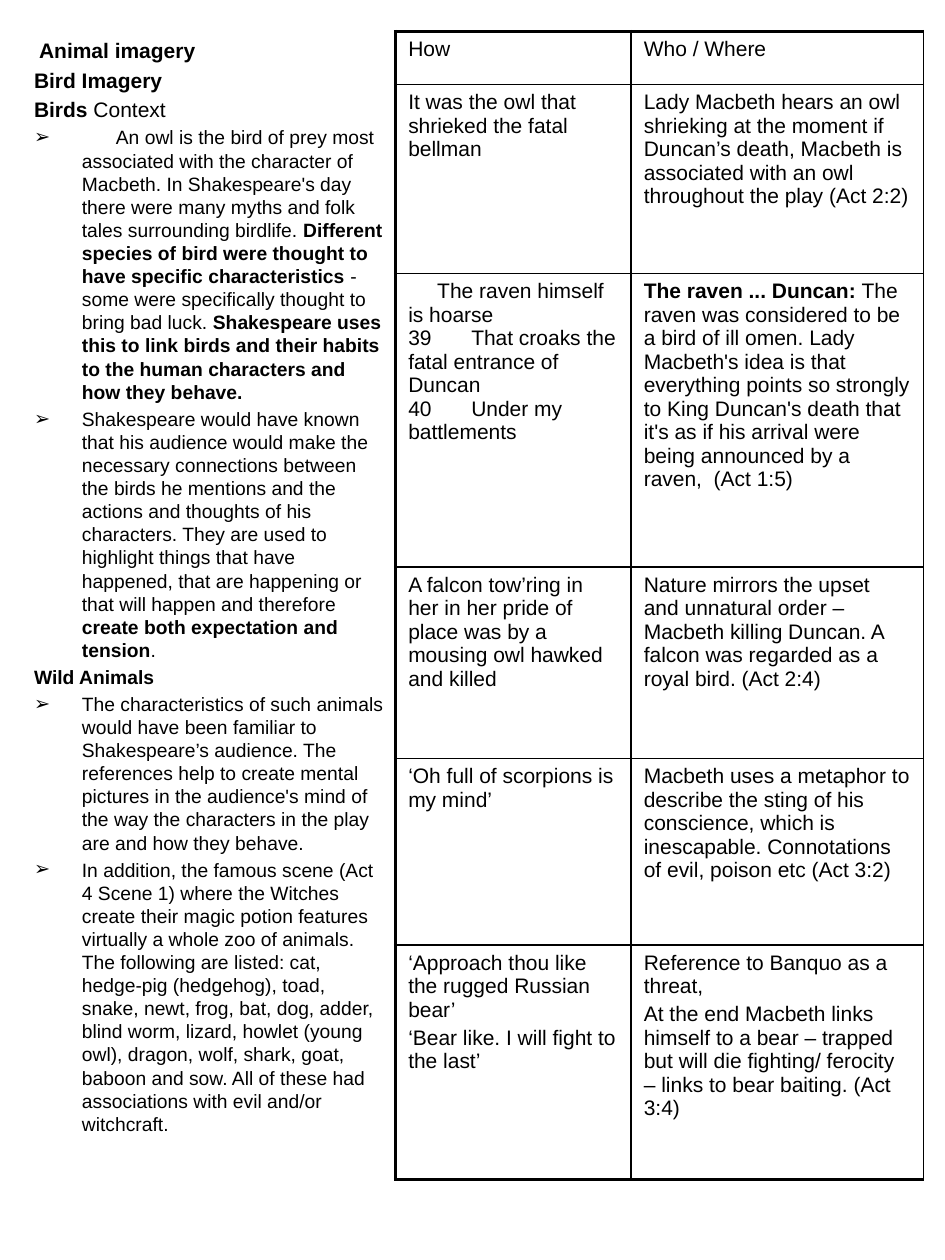
from dataclasses import dataclass

from pptx import Presentation
from pptx.dml.color import RGBColor
from pptx.enum.text import MSO_ANCHOR, MSO_AUTO_SIZE
from pptx.oxml.ns import qn
from pptx.util import Inches, Pt
from lxml.etree import SubElement


@dataclass(frozen=True)
class Theme:
    font: str = "Arial"
    ink: RGBColor = RGBColor(0, 0, 0)
    heading: Pt = Pt(12)
    body: Pt = Pt(11)
    cell: Pt = Pt(12)
    cell_gap: Pt = Pt(2.4)
    outer_line: Pt = Pt(2.25)
    inner_line: Pt = Pt(1)
    hanging: Inches = Inches(0.38)


THEME = Theme()

# (kind, text); ** switches bold on and off
NOTES = [
    ("heading", "** Animal imagery**"),
    ("heading", "**Bird Imagery**"),
    ("heading", "**Birds** Context"),
    ("bullet", "\tAn owl is the bird of prey most associated with the character of Macbeth. "
     "In Shakespeare's day there were many myths and folk tales surrounding birdlife. "
     "**Different species of bird were thought to have specific characteristics** - some were "
     "specifically thought to bring bad luck. **Shakespeare uses this to link birds and their "
     "habits to the human characters and how they behave.**"),
    ("bullet", "Shakespeare would have known that his audience would make the necessary "
     "connections between the birds he mentions and the actions and thoughts of his characters. "
     "They are used to highlight things that have happened, that are happening or that will "
     "happen and therefore **create both expectation and tension**."),
    ("subheading", "**Wild Animals**"),
    ("bullet", "The characteristics of such animals would have been familiar to Shakespeare’s "
     "audience. The references help to create mental pictures in the audience's mind of the way "
     "the characters in the play are and how they behave."),
    ("bullet", "In addition, the famous scene (Act 4 Scene 1) where the Witches create their "
     "magic potion features virtually a whole zoo of animals. The following are listed: cat, "
     "hedge-pig (hedgehog), toad, snake, newt, frog, bat, dog, adder, blind worm, lizard, howlet "
     "(young owl), dragon, wolf, shark, goat, baboon and sow. All of these had associations with "
     "evil and/or witchcraft."),
]

COLUMN_WIDTHS = [1.87, 2.32]
# (row height, how, who / where); each cell is a list of paragraphs
QUOTES = [
    (0.42, ["How"], ["Who / Where"]),
    (1.5, ["It was the owl that shrieked the fatal bellman"],
     ["Lady Macbeth hears an owl shrieking at the moment if Duncan’s death, Macbeth is "
      "associated with an owl throughout the play (Act 2:2)"]),
    (2.33, ["The raven himself is hoarse\n39\tThat croaks the fatal entrance of Duncan\n"
            "40\tUnder my battlements"],
     ["**The raven ... Duncan:** The raven was considered to be a bird of ill omen. Lady "
      "Macbeth's idea is that everything points so strongly to King Duncan's death that it's as "
      "if his arrival were being announced by a raven,  (Act 1:5)"]),
    (1.52, ["A falcon tow’ring in her in her pride of place was by a mousing owl hawked and "
            "killed"],
     ["Nature mirrors the upset and unnatural order – Macbeth killing Duncan. A falcon was "
      "regarded as a royal bird. (Act 2:4)"]),
    (1.48, ["‘Oh full of scorpions is my mind’"],
     ["Macbeth uses a metaphor to describe the sting of his conscience, which is inescapable. "
      "Connotations of evil, poison etc (Act 3:2)"]),
    (1.86, ["‘Approach thou like the rugged Russian bear’",
            "‘Bear like. I will fight to the last’"],
     ["Reference to Banquo as a threat,",
      "At the end Macbeth links himself to a bear – trapped but will die fighting/ ferocity – "
      "links to bear baiting. (Act 3:4)"]),
]


def write_spans(para, text, size):
    """Write text, with ** switching bold and a newline breaking the line."""
    for index, piece in enumerate(text.split("**")):
        for number, line in enumerate(piece.split("\n")):
            if number:
                para.add_line_break()
            if not line:
                continue
            span = para.add_run()
            span.text = line
            formats = {"name": THEME.font, "size": size, "bold": index % 2 == 1}
            for name, value in formats.items():
                setattr(span.font, name, value)
            span.font.color.rgb = THEME.ink


def set_indent(para, left, first):
    properties = para._p.get_or_add_pPr()
    properties.set("marL", str(left))
    properties.set("indent", str(first))
    return properties


def set_tabs(properties, *positions):
    tabs = SubElement(properties, qn("a:tabLst"))
    for position in positions:
        SubElement(tabs, qn("a:tab"), pos=str(position), algn="l")


def paragraphs(frame, items):
    """Yield a paragraph of the frame for each item."""
    for index, item in enumerate(items):
        yield (frame.add_paragraph() if index else frame.paragraphs[0]), item


def add_notes(page, left, top, width, height):
    page.shapes.title.element.getparent().remove(page.shapes.title.element)
    box = page.placeholders[1]
    for name, value in {"left": left, "top": top, "width": width, "height": height}.items():
        setattr(box, name, value)
    frame = box.text_frame
    frame.word_wrap = True
    frame.auto_size = MSO_AUTO_SIZE.NONE
    frame.vertical_anchor = MSO_ANCHOR.TOP
    for para, (kind, text) in paragraphs(frame, NOTES):
        properties = set_indent(para, THEME.hanging, -THEME.hanging)
        if kind == "bullet":
            SubElement(properties, qn("a:buFont"), typeface=THEME.font)
            SubElement(properties, qn("a:buChar"), char="➢")
        else:
            SubElement(properties, qn("a:buNone"))
        if "\t" in text:
            set_tabs(properties, Inches(0.27), Inches(0.65))
        write_spans(para, text, THEME.heading if kind == "heading" else THEME.body)


def set_borders(cell, widths):
    properties = cell._tc.get_or_add_tcPr()
    for index, (side, width) in enumerate(widths.items()):
        line = properties.makeelement(qn(f"a:{side}"), {"w": str(width)})
        fill = SubElement(line, qn("a:solidFill"))
        SubElement(fill, qn("a:srgbClr"), val=str(THEME.ink))
        properties.insert(index, line)


def fill_cell(cell, texts):
    cell.fill.background()
    for para, text in paragraphs(cell.text_frame, texts):
        para.space_before = THEME.cell_gap
        if "\t" in text:
            set_tabs(set_indent(para, 0, Inches(0.23)), Inches(0.33))
        write_spans(para, text, THEME.cell)


def add_quotes(page, left, top, width, height):
    table = page.shapes.add_table(
        len(QUOTES), len(COLUMN_WIDTHS), left, top, width, height).table
    table.first_row = table.horz_banding = False
    for column, column_width in zip(table.columns, COLUMN_WIDTHS):
        column.width = Inches(column_width)
    outer, inner = THEME.outer_line, THEME.inner_line
    last = len(QUOTES) - 1
    for row, (row_height, *cells) in enumerate(QUOTES):
        table.rows[row].height = Inches(row_height)
        for column, texts in enumerate(cells):
            cell = table.cell(row, column)
            fill_cell(cell, texts)
            set_borders(cell, {
                "lnL": inner if column else outer,
                "lnR": inner,
                "lnT": inner if row else outer,
                "lnB": outer if row == last else inner,
            })


def main():
    deck = Presentation()
    deck.slide_width, deck.slide_height = Inches(7.5), Inches(10)
    page = deck.slides.add_slide(deck.slide_layouts[1])
    add_notes(page, Inches(0.17), Inches(0.25), Inches(3), Inches(9.75))
    add_quotes(page, Inches(3.14), Inches(0.25), Inches(4.2), Inches(9.11))
    deck.save("out.pptx")


if __name__ == "__main__":
    main()
